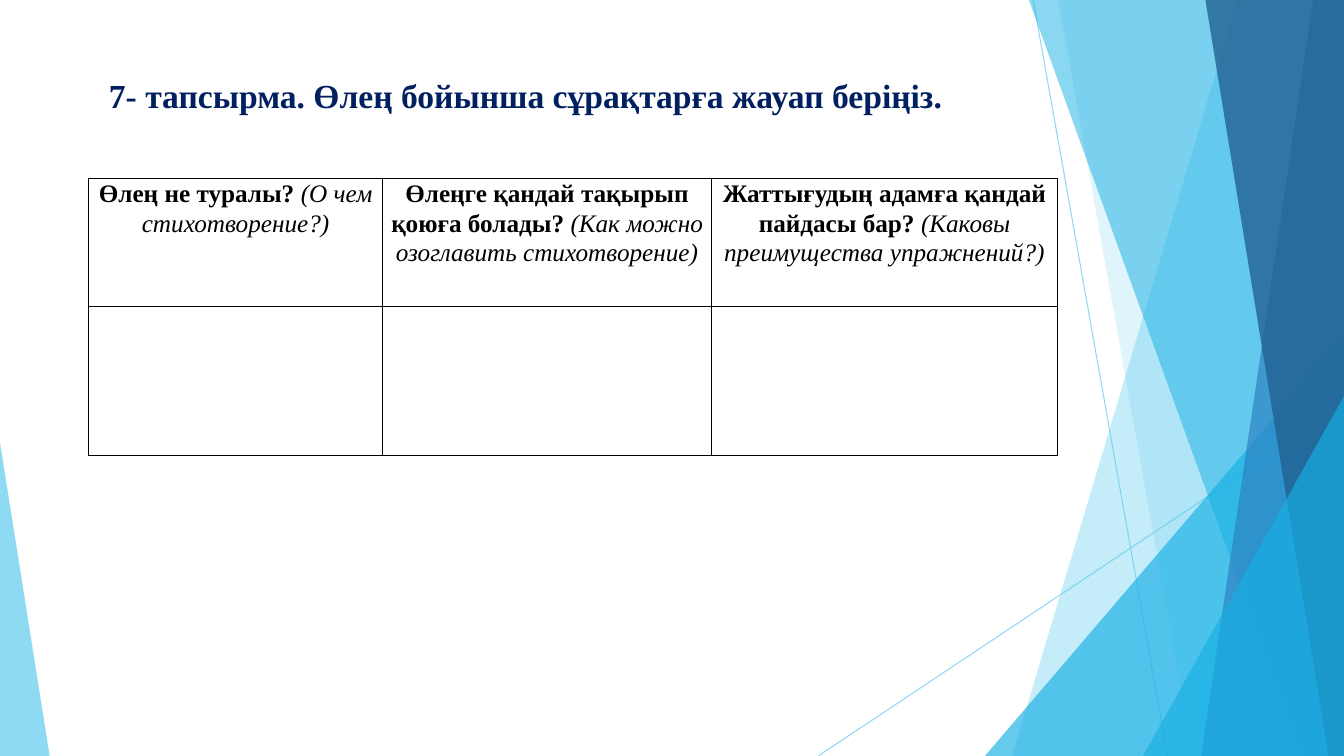
from dataclasses import dataclass

from lxml.etree import SubElement
from pptx import Presentation
from pptx.dml.color import RGBColor
from pptx.enum.shapes import MSO_CONNECTOR as Connector, MSO_SHAPE as Shape
from pptx.enum.text import MSO_ANCHOR as Anchor, MSO_AUTO_SIZE as AutoSize, PP_ALIGN as Align
from pptx.oxml.ns import qn
from pptx.util import Pt

WIDTH, HEIGHT = 960, 540


@dataclass(frozen=True)
class Theme:
    font: str = "Times New Roman"
    title_size: int = 24
    table_size: int = 18
    title: str = "002060"
    ink: str = "000000"
    sky: str = "5FCBEF"
    cyan: str = "17B0E4"
    blue: str = "2E83C3"
    navy: str = "226292"


class SlideBuilder:
    """Draws styled elements on one slide."""

    def __init__(self, slide, theme):
        self.slide = slide
        self.shapes = slide.shapes
        self.theme = theme

    def set_alpha(self, shape, percent):
        for color in shape.element.spPr.iter(qn("a:srgbClr")):
            SubElement(color, qn("a:alpha"), val=str(percent * 1000))

    def paint(self, shape, color, alpha):
        shape.shadow.inherit = False
        shape.fill.solid()
        shape.fill.fore_color.rgb = RGBColor.from_string(color)
        shape.line.fill.background()
        self.set_alpha(shape, alpha)

    def line(self, start, end, color, alpha):
        connector = self.shapes.add_connector(
            Connector.STRAIGHT, *(Pt(value) for value in (*start, *end)))
        connector.line.width = Pt(0.75)
        connector.line.color.rgb = RGBColor.from_string(color)
        self.set_alpha(connector, alpha)
        SubElement(connector.element.spPr, qn("a:effectLst"))

    def band(self, top_left, bottom_left, color, alpha):
        builder = self.shapes.build_freeform(top_left, 0, scale=Pt(1))
        builder.add_line_segments([(WIDTH, 0), (WIDTH, HEIGHT), (bottom_left, HEIGHT)])
        self.paint(builder.convert_to_shape(), color, alpha)

    def triangle(self, left, top, width, apex, color, alpha):
        box = (left, top, width, HEIGHT - top)
        shape = self.shapes.add_shape(Shape.ISOSCELES_TRIANGLE, *map(Pt, box))
        shape.adjustments[0] = apex
        self.paint(shape, color, alpha)

    def add_text(self, paragraph, text, size, color, **style):
        run = paragraph.add_run()
        run.text = text
        formats = {"name": self.theme.font, "size": Pt(size), **style}
        for name, value in formats.items():
            setattr(run.font, name, value)
        run.font.color.rgb = RGBColor.from_string(color)

    def title(self, text, left, top, width, height):
        shape = self.shapes.title
        self.shapes.element.append(shape.element)
        box = {"left": left, "top": top, "width": width, "height": height}
        for name, value in box.items():
            setattr(shape, name, Pt(value))
        frame = shape.text_frame
        formats = {"word_wrap": True, "auto_size": AutoSize.NONE,
                   "vertical_anchor": Anchor.TOP}
        for name, value in formats.items():
            setattr(frame, name, value)
        paragraph = frame.paragraphs[0]
        paragraph.alignment = Align.LEFT
        self.add_text(paragraph, text, self.theme.title_size, self.theme.title, bold=True)

    def border(self, cell):
        properties = cell._tc.get_or_add_tcPr()
        for side in ("lnL", "lnR", "lnT", "lnB"):
            edge = SubElement(properties, qn(f"a:{side}"), w=str(Pt(1)))
            fill = SubElement(edge, qn("a:solidFill"))
            SubElement(fill, qn("a:srgbClr"), val=self.theme.ink)

    def table(self, questions, left, top, widths, heights):
        box = (left, top, sum(widths), sum(heights))
        frame = self.shapes.add_table(len(heights), len(widths), *map(Pt, box))
        table = frame.table
        table.first_row = table.horz_banding = False
        for column, width in zip(table.columns, widths):
            column.width = Pt(width)
        for row, height in zip(table.rows, heights):
            row.height = Pt(height)
        margins = {"margin_left": 5.4, "margin_right": 5.4,
                   "margin_top": 0, "margin_bottom": 0}
        for cell in table.iter_cells():
            for name, value in margins.items():
                setattr(cell, name, Pt(value))
            self.border(cell)
            cell.fill.background()
        for cell, (question, translation) in zip(table.rows[0].cells, questions):
            paragraph = cell.text_frame.paragraphs[0]
            paragraph.alignment = Align.CENTER
            paragraph.line_spacing = 1.06
            size, ink = self.theme.table_size, self.theme.ink
            self.add_text(paragraph, f"{question} ", size, ink, bold=True)
            self.add_text(paragraph, translation, size, ink, bold=False, italic=True)


def main():
    presentation = Presentation()
    presentation.slide_width, presentation.slide_height = Pt(WIDTH), Pt(HEIGHT)
    theme = Theme()
    builder = SlideBuilder(presentation.slides.add_slide(presentation.slide_layouts[5]), theme)

    builder.line((738, 0), (834, HEIGHT), theme.sky, 70)
    builder.line((WIDTH, 290), (584.5, HEIGHT), theme.sky, 70)
    builder.band(884, 723, theme.sky, 36)
    builder.band(756, 852, theme.sky, 20)
    builder.triangle(703.5, 240, 256.5, 1, theme.cyan, 66)
    builder.band(735, 929.5, theme.cyan, 50)
    builder.band(938, 858.5, theme.blue, 70)
    builder.band(861, 949, theme.navy, 80)
    builder.triangle(816.5, 283, 143.5, 1, theme.cyan, 66)
    builder.triangle(0, 316, 35.5, 0, theme.sky, 70)

    builder.title("7- тапсырма. Өлең бойынша сұрақтарға жауап беріңіз.", 70.6, 49.7, 692, 60)
    questions = [
        ("Өлең не туралы?", "(О чем стихотворение?)"),
        ("Өлеңге қандай тақырып қоюға болады?", "(Как можно озоглавить стихотворение)"),
        ("Жаттығудың адамға қандай пайдасы бар?", "(Каковы преимущества упражнений?)"),
    ]
    builder.table(questions, 63.3, 127.4, (210, 235, 247), (91.5, 106.5))
    presentation.save("out.pptx")


if __name__ == "__main__":
    main()
